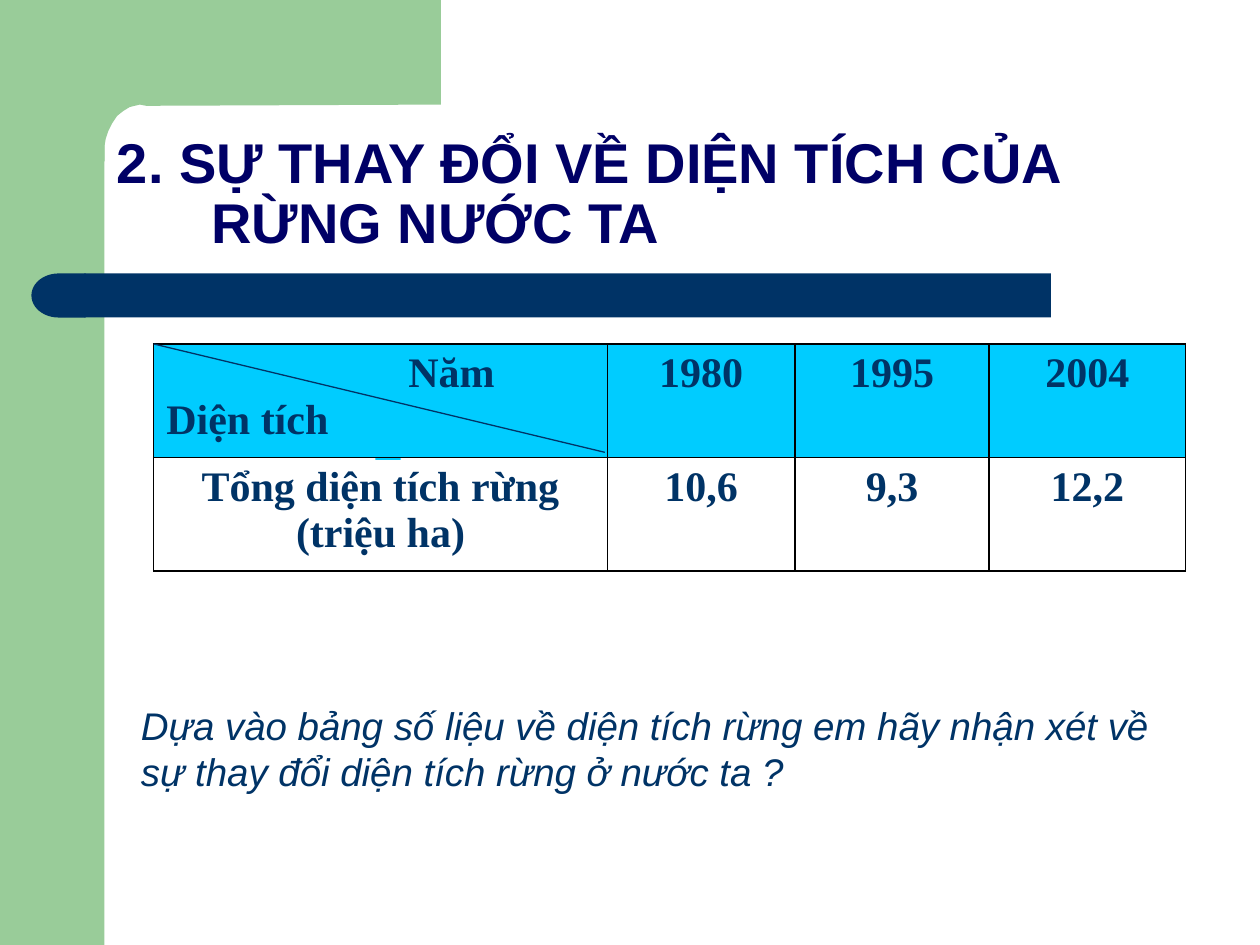
import lxml.etree
import pptx
import pptx.util
import pptx.dml.color
import pptx.enum.shapes
import pptx.enum.text
import pptx.oxml
import pptx.oxml.ns

Inches, Pt = pptx.util.Inches, pptx.util.Pt
RGBColor = pptx.dml.color.RGBColor
Shape = pptx.enum.shapes.MSO_SHAPE
Align = pptx.enum.text.PP_ALIGN
qn = pptx.oxml.ns.qn

GREEN = RGBColor(0x99, 0xCC, 0x99)
NAVY = RGBColor(0x00, 0x33, 0x66)
INDIGO = RGBColor(0x00, 0x00, 0x66)
CYAN = RGBColor(0x00, 0xCC, 0xFF)

# Content
TITLE = "2. SỰ THAY ĐỔI VỀ DIỆN TÍCH CỦA RỪNG NƯỚC TA"
TASK = ("Dựa vào bảng số liệu về diện tích rừng em hãy nhận xét về "
        "sự thay đổi diện tích rừng ở nước ta ?")
ROWS = [
    ["Năm\nDiện tích", "1980", "1995", "2004"],
    ["Tổng diện tích rừng\n(triệu ha)", "10,6", "9,3", "12,2"],
]
COLS = [3.6, 1.49, 1.54, 1.56]
ROW_H = 0.9
LEFT, TOP = 1.22, 2.73
CORNER = [(3.5, 0), (3.5, 0.83), (1.16, 0.84), (1.11, 0.83), (1.03, 0.85),
          (0.98, 0.88), (0.93, 0.92), (0.89, 0.98), (0.86, 1.04),
          (0.84, 1.1), (0.83, 1.16), (0.83, 1.28), (0.5, 1.28), (0.5, 0)]

deck = pptx.Presentation()
deck.slide_width, deck.slide_height = Inches(10), Inches(7.5)
slide = deck.slides.add_slide(deck.slide_layouts[6])
shapes = slide.shapes


def paint(shape, color):
    shape.shadow.inherit = False
    shape.fill.solid()
    shape.fill.fore_color.rgb = color
    shape.line.fill.background()
    return shape


def block(kind, box, color):
    return paint(shapes.add_shape(kind, *map(Inches, box)), color)


def style(para, size, name, color, bold=False, italic=False):
    font = para.font
    font.size, font.name, font.color.rgb = Pt(size), name, color
    font.bold, font.italic = bold, italic


def indent(para, left, first):
    props = para._p.get_or_add_pPr()
    props.set("marL", str(Inches(left)))
    props.set("indent", str(Inches(first)))


def label(box, text):
    frame = shapes.add_textbox(*map(Inches, box)).text_frame
    frame.word_wrap = True
    frame.text = text
    return frame


def border(cell):
    props = cell._tc.get_or_add_tcPr()
    for i, side in enumerate(("lnL", "lnR", "lnT", "lnB")):
        props.insert(i, pptx.oxml.parse_xml(
            f'<a:{side} xmlns:a="http://schemas.openxmlformats.org/drawingml/2006/main"'
            ' w="12700"><a:solidFill><a:srgbClr val="000000"/></a:solidFill>'
            f'</a:{side}>'))


# Side band, inner corner and title bar
block(Shape.RECTANGLE, (0, 0, 0.83, 7.5), GREEN)
path = shapes.build_freeform(*map(Inches, CORNER[0]), scale=1.0)
path.add_line_segments([(Inches(x), Inches(y)) for x, y in CORNER[1:]])
paint(path.convert_to_shape(), GREEN)
block(Shape.RECTANGLE, (0.67, 2.17, 7.67, 0.35), NAVY)
cap = block(Shape.FLOWCHART_DELAY, (0.25, 2.17, 0.43, 0.35), NAVY)
cap._element.spPr.find(qn("a:xfrm")).set("flipH", "1")

# Title
frame = label((0.83, 0.83, 8.67, 1.25), TITLE)
frame.vertical_anchor = pptx.enum.text.MSO_ANCHOR.BOTTOM
para = frame.paragraphs[0]
indent(para, 0.75, -0.75)
para.line_spacing = 0.9
style(para, 32, "Arial", INDIGO, bold=True)

# Small tab under the table's header
block(Shape.RECTANGLE, (2.98, 3.25, 0.2, 0.4), CYAN)

# Table
table = shapes.add_table(len(ROWS), len(COLS), Inches(LEFT), Inches(TOP),
                         Inches(sum(COLS)), Inches(ROW_H * len(ROWS))).table
table.first_row = table.horz_banding = False
for col, width in zip(table.columns, COLS):
    col.width = Inches(width)
for r, row in enumerate(ROWS):
    table.rows[r].height = Inches(ROW_H)
    for c, text in enumerate(row):
        cell = table.cell(r, c)
        cell.text = text
        if r == 0:
            cell.fill.solid()
            cell.fill.fore_color.rgb = CYAN
        else:
            cell.fill.background()
        border(cell)
        for para in cell.text_frame.paragraphs:
            para.alignment = Align.LEFT if r == c == 0 else Align.CENTER
            style(para, 24, "Times New Roman", NAVY, bold=True)
indent(table.cell(0, 0).text_frame.paragraphs[0], 1.92, 0)

# Diagonal of the header cell
line = shapes.add_connector(pptx.enum.shapes.MSO_CONNECTOR.STRAIGHT,
                            Inches(LEFT), Inches(TOP), Inches(4.8), Inches(3.59))
line.line.color.rgb, line.line.width = NAVY, Pt(0.75)
lxml.etree.SubElement(line._element.spPr, qn("a:effectLst"))

# Question
frame = label((1.02, 5.52, 8.55, 0.83), TASK)
style(frame.paragraphs[0], 22, "Arial", NAVY, italic=True)

deck.save("out.pptx")
